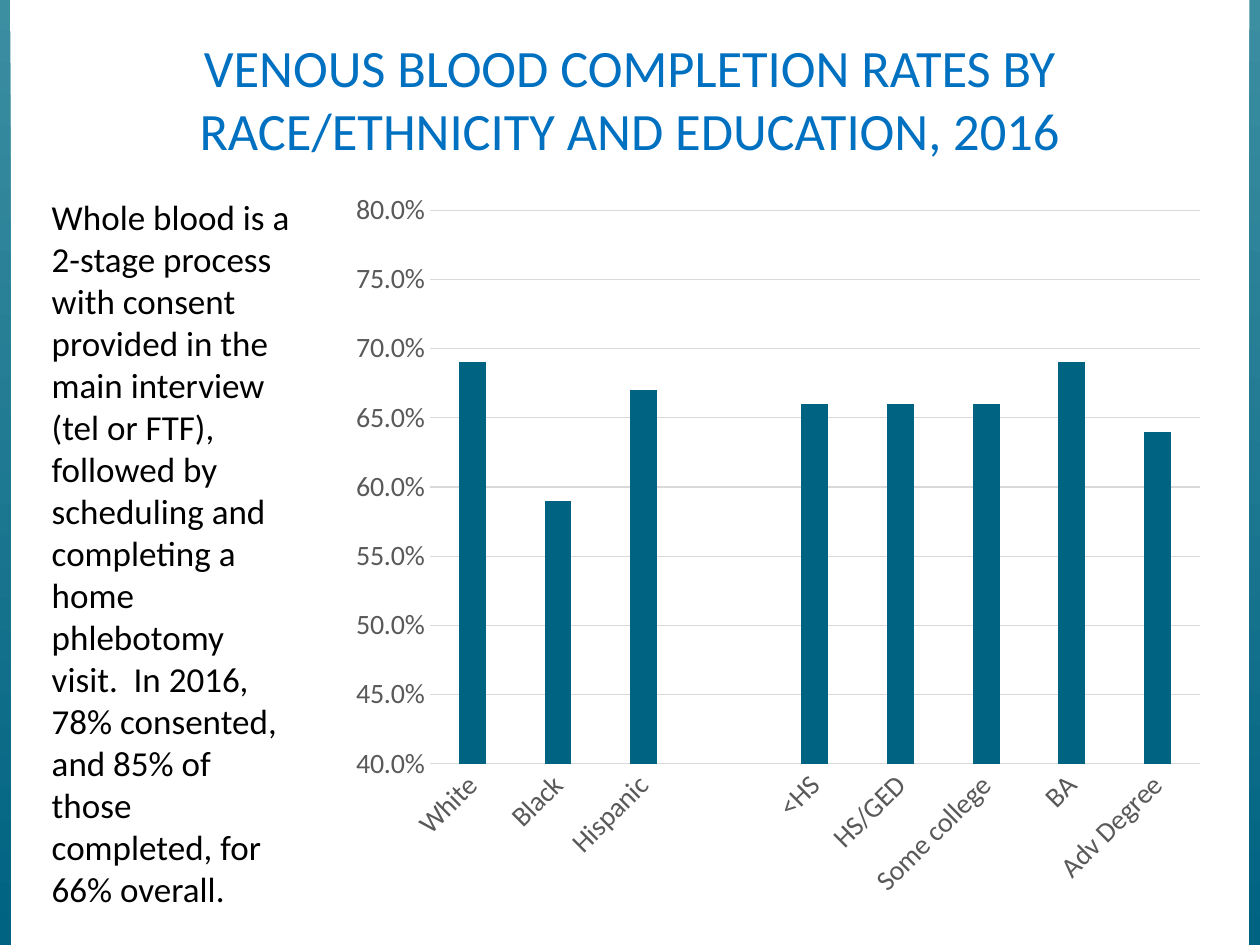
from pptx import Presentation
from pptx.chart.data import CategoryChartData
from pptx.dml.color import RGBColor
from pptx.enum.chart import XL_CHART_TYPE, XL_TICK_MARK
from pptx.enum.shapes import MSO_SHAPE
from pptx.enum.text import MSO_ANCHOR, MSO_AUTO_SIZE, PP_ALIGN
from pptx.util import Pt

COLUMNS = XL_CHART_TYPE.COLUMN_CLUSTERED
NO_TICKS = XL_TICK_MARK.NONE
RECTANGLE = MSO_SHAPE.RECTANGLE
TOP = MSO_ANCHOR.TOP
FIXED_SIZE = MSO_AUTO_SIZE.NONE
FIT_SHAPE = MSO_AUTO_SIZE.SHAPE_TO_FIT_TEXT
CENTER = PP_ALIGN.CENTER
LEFT = PP_ALIGN.LEFT

FONT = "Calibri"
COLORS = {
    "title": "0070C0",
    "body": "000000",
    "bar": "006382",
    "edge_light": "3C8EA1",
    "label": "595959",
    "grid": "D9D9D9",
}
SLIDE_WIDTH, SLIDE_HEIGHT = 720, 540
EDGE_WIDTH = 6

TITLE = "VENOUS BLOOD COMPLETION RATES BY RACE/ETHNICITY AND EDUCATION, 2016"
PROCESS_NOTE = (
    "Whole blood is a 2-stage process with consent provided in the main "
    "interview (tel or FTF), followed by scheduling and completing a home "
    "phlebotomy visit.  In 2016, 78% consented, and 85% of those completed, "
    "for 66% overall."
)
# The unnamed group separates race/ethnicity from education
COMPLETION_RATES = [
    ("White", 0.69),
    ("Black", 0.59),
    ("Hispanic", 0.67),
    ("", None),
    ("<HS", 0.66),
    ("HS/GED", 0.66),
    ("Some college", 0.66),
    ("BA", 0.69),
    ("Adv Degree", 0.64),
]


def color(name):
    return RGBColor.from_string(COLORS[name])


def style_font(font, size, color_name):
    font.name = FONT
    font.size = Pt(size)
    font.bold = False
    font.color.rgb = color(color_name)


def write_text(frame, text, size, color_name, alignment, sizing):
    frame.word_wrap = True
    frame.vertical_anchor = TOP
    frame.auto_size = sizing
    frame.text = text
    paragraph = frame.paragraphs[0]
    paragraph.alignment = alignment
    style_font(paragraph.font, size, color_name)


def add_edge(slide, left):
    edge = slide.shapes.add_shape(
        RECTANGLE, Pt(left), Pt(0), Pt(EDGE_WIDTH), Pt(SLIDE_HEIGHT))
    edge.shadow.inherit = False
    edge.line.fill.background()
    edge.fill.gradient()
    edge.fill.gradient_angle = 260
    for stop, name in zip(edge.fill.gradient_stops, ("edge_light", "bar")):
        stop.color.rgb = color(name)


def set_title(slide):
    title = slide.shapes.title
    title.left, title.top = Pt(49.7), Pt(16.6)
    title.width, title.height = Pt(620.6), Pt(36.7)
    write_text(title.text_frame, TITLE, 30, "title", CENTER, FIXED_SIZE)


def add_process_note(slide):
    note = slide.shapes.add_textbox(Pt(22.5), Pt(108), Pt(151.2), Pt(419))
    write_text(note.text_frame, PROCESS_NOTE, 20, "body", LEFT, FIT_SHAPE)


def style_axis(axis):
    axis.major_tick_mark = NO_TICKS
    axis.minor_tick_mark = NO_TICKS
    style_font(axis.tick_labels.font, 16, "label")


def style_line(line):
    line.color.rgb = color("grid")
    line.width = Pt(0.75)


def add_rates_chart(slide):
    data = CategoryChartData(number_format="0.0%")
    data.categories = [group for group, _ in COMPLETION_RATES]
    data.add_series("Series 1", [rate for _, rate in COMPLETION_RATES])
    chart = slide.shapes.add_chart(
        COLUMNS, Pt(193.4), Pt(102), Pt(502.5), Pt(419.5), data).chart
    chart.has_title = False
    chart.has_legend = False
    style_font(chart.font, 16, "body")

    # Bars
    plot = chart.plots[0]
    plot.gap_width = 219
    plot.overlap = -27
    plot.vary_by_categories = False
    bars = plot.series[0].format.fill
    bars.solid()
    bars.fore_color.rgb = color("bar")

    # Group axis with slanted labels
    groups = chart.category_axis
    style_axis(groups)
    style_line(groups.format.line)
    label_body = groups._element.txPr.bodyPr
    label_body.set("rot", "-2700000")
    label_body.set("vert", "horz")

    # Rate axis with gridlines
    rates = chart.value_axis
    style_axis(rates)
    rates.format.line.fill.background()
    rates.minimum_scale, rates.maximum_scale = 0.4, 0.8
    rates.major_unit = 0.05
    rates.tick_labels.number_format = "0.0%"
    rates.tick_labels.number_format_is_linked = False
    style_line(rates.major_gridlines.format.line)


def main():
    presentation = Presentation()
    presentation.slide_width = Pt(SLIDE_WIDTH)
    presentation.slide_height = Pt(SLIDE_HEIGHT)
    title_only = presentation.slide_layouts[5]
    slide = presentation.slides.add_slide(title_only)

    for left in (0, SLIDE_WIDTH - EDGE_WIDTH):
        add_edge(slide, left)
    set_title(slide)
    add_process_note(slide)
    add_rates_chart(slide)
    presentation.save("out.pptx")


if __name__ == "__main__":
    main()
